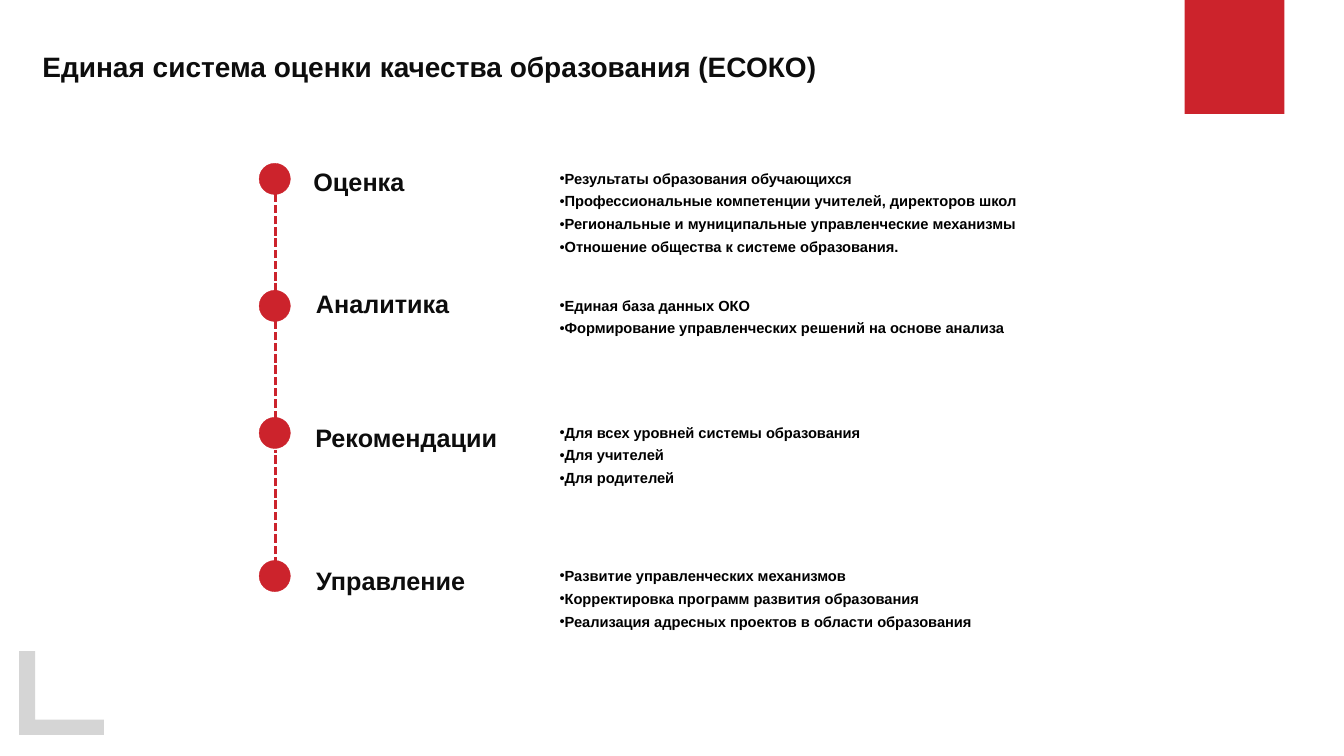
from lxml import etree
from pptx import Presentation
from pptx.dml.color import RGBColor
from pptx.enum.dml import MSO_LINE
from pptx.enum.shapes import MSO_CONNECTOR, MSO_SHAPE
from pptx.enum.text import MSO_ANCHOR, PP_ALIGN
from pptx.oxml.ns import qn
from pptx.util import Inches, Pt

COLORS = {"red": "CC232C", "gray": "D5D5D5", "title": "0D0D0D", "body": "000000"}

presentation = Presentation()
presentation.slide_width = Inches(13.33)
presentation.slide_height = Inches(7.5)
slide = presentation.slides.add_slide(presentation.slide_layouts[6])


def color(name):
    return RGBColor.from_string(COLORS[name])


def add_text(lines, left, top, width, height, size, color_name="title", inset=0.13,
             align=PP_ALIGN.LEFT, bullet=None, space_before=0, space_after=0,
             line_spacing=1.0):
    """Add a bold text box with one paragraph per line."""
    box = slide.shapes.add_textbox(Inches(left), Inches(top), Inches(width), Inches(height))
    frame = box.text_frame
    frame.word_wrap = True
    frame.vertical_anchor = MSO_ANCHOR.TOP
    frame.margin_left = frame.margin_right = Inches(inset)
    frame.margin_top = frame.margin_bottom = Inches(inset)
    for index, line in enumerate(lines):
        paragraph = frame.paragraphs[0] if index == 0 else frame.add_paragraph()
        paragraph.alignment = align
        paragraph.line_spacing = line_spacing
        paragraph.space_before = Pt(space_before if index else 0)
        paragraph.space_after = Pt(space_after)
        if bullet:
            properties = paragraph._p.get_or_add_pPr()
            properties.set("marL", "0")
            properties.set("indent", str(Inches(0.09)))
            etree.SubElement(properties, qn("a:buFont")).set("typeface", "Arial")
            etree.SubElement(properties, qn("a:buChar")).set("char", bullet)
        run = paragraph.add_run()
        run.text = line
        run.font.name = "Arial"
        run.font.size = Pt(size)
        run.font.bold = True
        run.font.color.rgb = color(color_name)


# Corner decorations
builder = slide.shapes.build_freeform(Inches(1.03), Inches(7.29), scale=1.0)
corner_points = [(1.03, 7.14), (0.35, 7.14), (0.35, 6.46), (0.19, 6.46), (0.19, 7.29)]
builder.add_line_segments([(Inches(x), Inches(y)) for x, y in corner_points], close=True)
corner = builder.convert_to_shape()
corner.shadow.inherit = False
corner.fill.solid()
corner.fill.fore_color.rgb = color("gray")
corner.line.fill.background()

banner = slide.shapes.add_shape(
    MSO_SHAPE.RECTANGLE, Inches(11.75), Inches(-0.03), Inches(0.99), Inches(1.16))
banner.shadow.inherit = False
banner.fill.solid()
banner.fill.fore_color.rgb = color("red")
banner.line.fill.background()

add_text(["Единая система оценки качества образования (ЕСОКО)"],
         0.37, 0.44, 9.05, 0.99, size=20, inset=0.05)

# Dashed timeline
for bottom in (3.12, 4.38, 5.72):
    connector = slide.shapes.add_connector(
        MSO_CONNECTOR.STRAIGHT, Inches(2.73), Inches(bottom), Inches(2.73), Inches(bottom - 1.26))
    connector.line.color.rgb = color("red")
    connector.line.width = Pt(2)
    connector.line.dash_style = MSO_LINE.SQUARE_DOT
    etree.SubElement(connector._element.spPr, qn("a:effectLst"))

# Stages: marker top, label, label box, label line spacing, details
stages = [
    (1.62, "Оценка", (2.89, 1.55, 1.34, 0.55), 0.9, [
        "Результаты образования обучающихся",
        "Профессиональные компетенции учителей, директоров школ",
        "Региональные и муниципальные управленческие механизмы",
        "Отношение общества к системе образования."]),
    (2.88, "Аналитика", (2.81, 2.73, 1.97, 0.71), 1.0, [
        "Единая база данных ОКО",
        "Формирование управленческих решений на основе анализа"]),
    (4.14, "Рекомендации", (2.81, 4.06, 2.44, 0.71), 1.0, [
        "Для всех уровней системы образования",
        "Для учителей",
        "Для родителей"]),
    (5.56, "Управление", (2.89, 5.48, 1.97, 0.71), 1.0, [
        "Развитие управленческих механизмов",
        "Корректировка программ развития образования",
        "Реализация адресных проектов в области образования"]),
]
for marker_top, label, label_box, label_spacing, details in stages:
    marker = slide.shapes.add_shape(
        MSO_SHAPE.OVAL, Inches(2.57), Inches(marker_top), Inches(0.31), Inches(0.31))
    marker.shadow.inherit = False
    marker.fill.solid()
    marker.fill.fore_color.rgb = color("red")
    marker.line.color.rgb = color("red")
    marker.line.width = Pt(0.25)
    add_text([label], *label_box, size=18, align=PP_ALIGN.CENTER,
             space_after=3, line_spacing=label_spacing)
    add_text(details, 5.33, marker_top - 0.07, 5.35, 1.18, size=10.5,
             color_name="body", bullet="•", space_before=3.8)

presentation.save("out.pptx")
